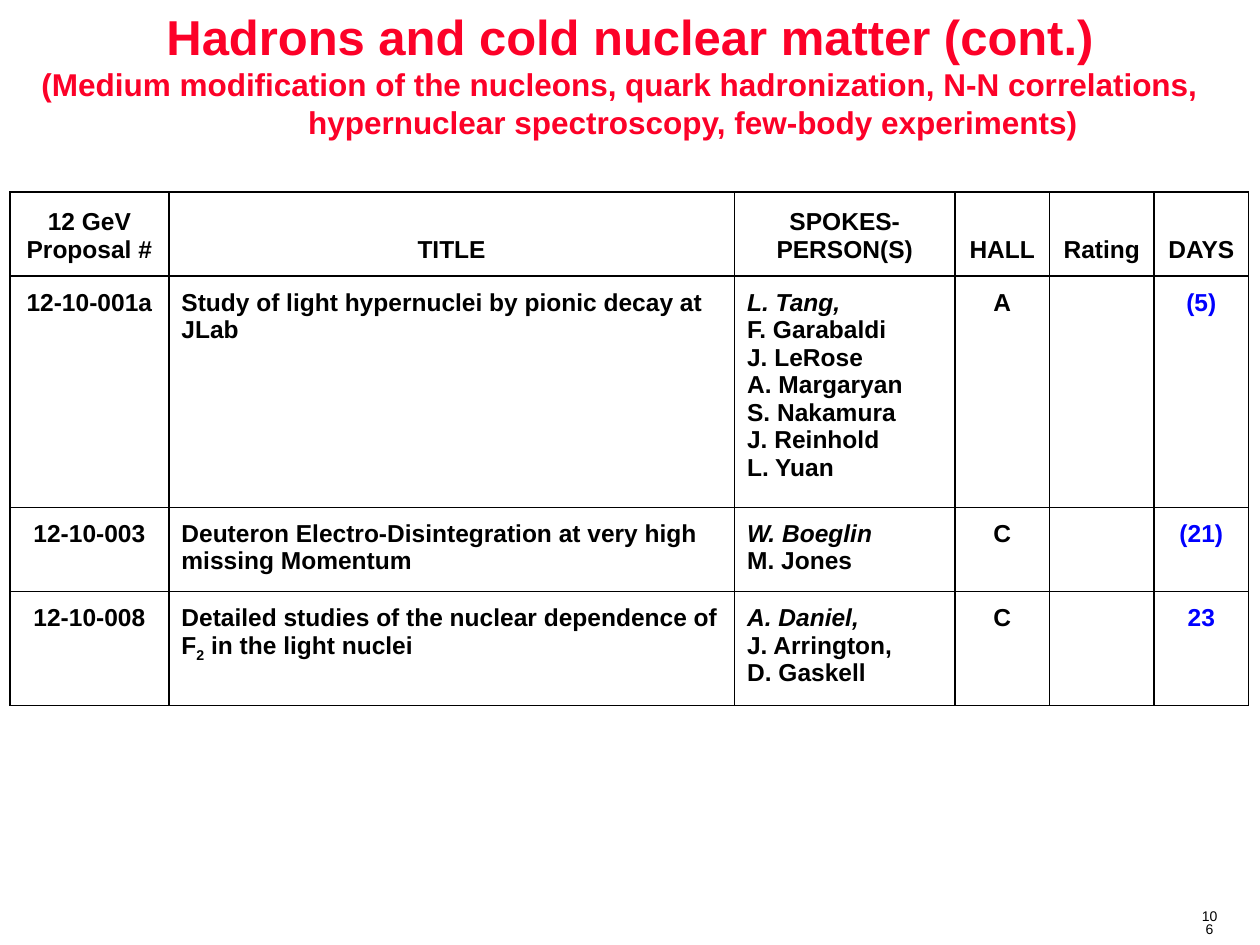
from lxml import etree
from pptx import Presentation
from pptx.dml.color import RGBColor
from pptx.enum.text import MSO_ANCHOR, PP_ALIGN
from pptx.oxml.ns import qn
from pptx.util import Inches, Pt

LEFT, CENTER = PP_ALIGN.LEFT, PP_ALIGN.CENTER
TOP, MIDDLE, BOTTOM = MSO_ANCHOR.TOP, MSO_ANCHOR.MIDDLE, MSO_ANCHOR.BOTTOM
COLORS = {"title": "FC0128", "text": "000000", "days": "0000FF", "border": "000000"}

prs = Presentation()
prs.slide_width, prs.slide_height = Inches(10), Inches(7.5)
W, H = prs.slide_width, prs.slide_height
slide = prs.slides.add_slide(prs.slide_layouts[6])


def add_run(paragraph, text, size, color, **formats):
    run = paragraph.add_run()
    run.text = text
    for name, value in {"name": "Arial", "size": Pt(size), "bold": True, **formats}.items():
        setattr(run.font, name, value)
    run.font.color.rgb = RGBColor.from_string(COLORS[color])
    return run


def style_cell(cell, anchor):
    cell.vertical_anchor = anchor
    for side in ("left", "right", "top", "bottom"):
        setattr(cell, f"margin_{side}", Inches(0.1))
    properties = cell._tc.get_or_add_tcPr()
    for edge in ("a:lnL", "a:lnR", "a:lnT", "a:lnB"):
        line = etree.SubElement(properties, qn(edge), w=str(Pt(1)))
        fill = etree.SubElement(line, qn("a:solidFill"))
        etree.SubElement(fill, qn("a:srgbClr"), val=COLORS["border"])
    cell.fill.background()


# Title with a two-line subtitle: text, size, left and right indent
heading = slide.shapes.add_textbox(0, int(H * 0.023), W, int(H * 0.11)).text_frame
heading.word_wrap = True
heading.vertical_anchor = MIDDLE
heading_lines = [
    ("Hadrons and cold nuclear matter (cont.)", 28, 0, 0),
    ("(Medium modification of the nucleons, quark hadronization, N-N correlations,", 18, 0, 0.16),
    ("hypernuclear spectroscopy, few-body experiments)", 18, 1, 0),
]
for index, (text, size, indent_left, indent_right) in enumerate(heading_lines):
    paragraph = heading.add_paragraph() if index else heading.paragraphs[0]
    paragraph.alignment = CENTER
    indents = paragraph._p.get_or_add_pPr()
    indents.set("marL", str(Inches(indent_left)))
    indents.set("marR", str(Inches(indent_right)))
    add_run(paragraph, text, size, "title")

# Proposal table
headers = ["12 GeV Proposal #", "TITLE", "SPOKES-PERSON(S)", "HALL", "Rating", "DAYS"]
proposals = [
    ["12-10-001a", "Study of light hypernuclei by pionic decay at JLab",
     ["L. Tang,", "F. Garabaldi", "J. LeRose", "A. Margaryan", "S. Nakamura",
      "J. Reinhold", "L. Yuan"], "A", "", "(5)"],
    ["12-10-003", "Deuteron Electro-Disintegration at very high missing Momentum",
     ["W. Boeglin", "M. Jones"], "C", "", "(21)"],
    ["12-10-008", "Detailed studies of the nuclear dependence of F_2_ in the light nuclei",
     ["A. Daniel,", "J. Arrington,", "D. Gaskell"], "C", "", "23"],
]
column_widths = [1.26, 4.49, 1.75, 0.75, 0.83, 0.75]
row_heights = [0.67, 1.83, 0.67, 0.9]
table = slide.shapes.add_table(
    len(row_heights), len(column_widths), int(W * 0.008), int(H * 0.203),
    Inches(sum(column_widths)), Inches(sum(row_heights))).table
table.first_row = table.horz_banding = False
for column, width in zip(table.columns, column_widths):
    column.width = Inches(width)
for row, height in zip(table.rows, row_heights):
    row.height = Inches(height)

for r, record in enumerate([headers] + proposals):
    for c, content in enumerate(record):
        cell = table.cell(r, c)
        style_cell(cell, TOP if r else BOTTOM)
        color = "days" if r and headers[c] == "DAYS" else "text"
        names = isinstance(content, list)
        for index, line in enumerate(content if names else [content]):
            frame = cell.text_frame
            paragraph = frame.add_paragraph() if index else frame.paragraphs[0]
            paragraph.alignment = LEFT if r and c in (1, 2) else CENTER
            # Underscores enclose a subscript; the lead spokesperson is italic
            for part, text in enumerate(line.split("_")):
                if text:
                    run = add_run(paragraph, text, 14, color, italic=names and index == 0)
                    if part % 2:
                        run.font._element.set("baseline", "-25000")

# Slide number
number = slide.shapes.add_textbox(int(W * 0.943), int(H * 0.957), int(W * 0.034), int(H * 0.028))
number.text_frame.word_wrap = True
paragraph = number.text_frame.paragraphs[0]
paragraph.alignment = CENTER
paragraph.line_spacing = 0.8
add_run(paragraph, "106", 8, "text", bold=False)

prs.save("out.pptx")
